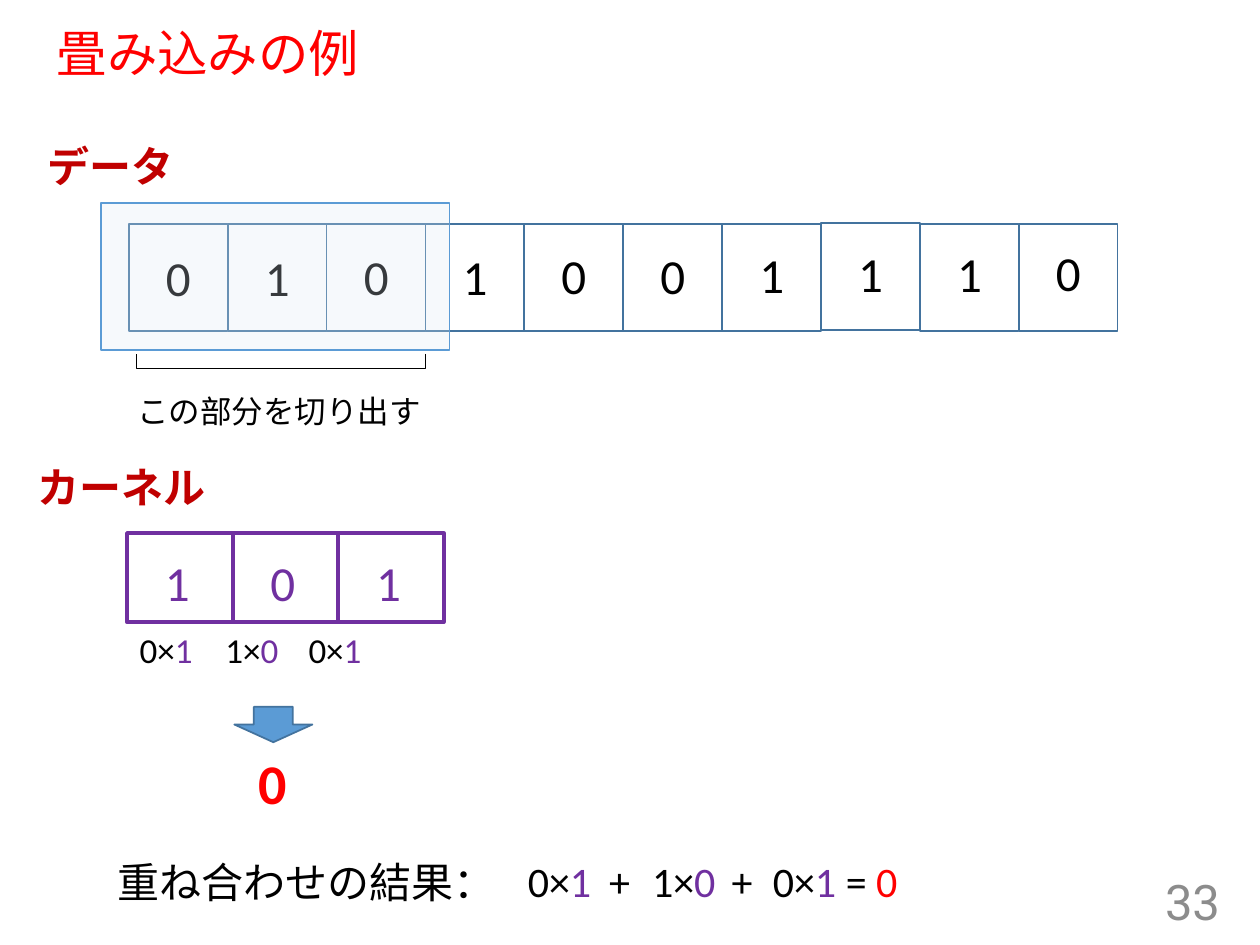
from pptx import Presentation
from pptx.dml.color import RGBColor
from pptx.enum.shapes import MSO_SHAPE
from pptx.enum.text import MSO_ANCHOR, PP_ALIGN
from pptx.oxml.ns import qn
from pptx.util import Pt
from lxml import etree

RECT = MSO_SHAPE.RECTANGLE
ARROW = MSO_SHAPE.DOWN_ARROW
BRACKET = MSO_SHAPE.RIGHT_BRACKET
MIDDLE = MSO_ANCHOR.MIDDLE
LEFT, RIGHT = PP_ALIGN.LEFT, PP_ALIGN.RIGHT


class Theme:
    black = RGBColor(0, 0, 0)
    red = RGBColor(255, 0, 0)
    crimson = RGBColor(192, 0, 0)
    purple = RGBColor(112, 48, 160)
    navy = RGBColor(67, 115, 158)
    blue = RGBColor(91, 155, 213)
    pale = RGBColor(222, 235, 247)
    gray = RGBColor(140, 140, 140)
    body, head, sans = "Calibri", "Noto Sans CJK JP", "Roboto"
    title, digit, total = 28.8, 28, 32
    large, term, note = 24, 20, 18


def write(left, top, width, height, runs, size, color=Theme.black,
          face=Theme.body, bold=False, stops=()):
    box = slide.shapes.add_textbox(Pt(left), Pt(top), Pt(width), Pt(height))
    box.text_frame.word_wrap = bool(stops)
    para = box.text_frame.paragraphs[0]
    if stops:
        tabs = etree.Element(qn("a:tabLst"))
        for stop in stops:
            etree.SubElement(tabs, qn("a:tab"), pos=str(Pt(stop)), algn="l")
        para._p.get_or_add_pPr().insert(0, tabs)
    font = para.font
    font.size, font.name, font.bold = Pt(size), face, bold
    for text, tint in ([(runs, color)] if isinstance(runs, str) else runs):
        run = para.add_run()
        run.text = text
        run.font.color.rgb = tint
    return box


def draw(kind, left, top, width, height, line, weight=1, fill=None):
    shape = slide.shapes.add_shape(kind, Pt(left), Pt(top), Pt(width), Pt(height))
    shape.shadow.inherit = False
    shape.line.color.rgb = line
    shape.line.width = Pt(weight)
    if fill is None:
        shape.fill.background()
    else:
        shape.fill.solid()
        shape.fill.fore_color.rgb = fill
    return shape


deck = Presentation()
deck.slide_width, deck.slide_height = Pt(720), Pt(540)
slide = deck.slides.add_slide(deck.slide_layouts[5])

title = slide.shapes.title
title.left, title.top, title.width, title.height = Pt(25.2), Pt(13.7), Pt(666), Pt(36.7)
title.text_frame.text = "畳み込みの例"
title.text_frame.vertical_anchor = MIDDLE
para = title.text_frame.paragraphs[0]
para.alignment, para.line_spacing = LEFT, 0.9
para.font.size, para.font.name = Pt(Theme.title), Theme.sans
para.font.color.rgb = Theme.red

page = write(542.2, 500.4, 162, 28.8, "33", Theme.digit, Theme.gray, Theme.sans)
page.text_frame.word_wrap = True
page.text_frame.vertical_anchor = MIDDLE
page.text_frame.paragraphs[0].alignment = RIGHT

data, pitch = "0101001110", 56.5
for i in range(len(data)):
    top = 127.4 if i == 7 else 128.1
    draw(RECT, 73.6 + i * pitch, top, pitch, 61.2, Theme.navy)
for i, digit in enumerate(data):
    write(87.8 + i * pitch, 138 - i * 0.3, 28.8, 41, digit, Theme.digit)

draw(ARROW, 133.9, 403.9, 44.6, 20.2, Theme.navy, fill=Theme.blue)
write(140.4, 424.1, 31, 46, "0", Theme.total, Theme.red, bold=True)

for i, digit in enumerate("101"):
    draw(RECT, 72.6 + i * 60.3, 304.6, 60.3, 51, Theme.purple, 2.25)
    write(87.2 + i * 60.3, 312.3, 28.8, 41, digit, Theme.digit, Theme.purple)

write(72.7, 355.7, 173, 31.7,
      [("0×", Theme.black), ("1", Theme.purple),
       ("\t1×", Theme.black), ("0", Theme.purple),
       ("\t0×", Theme.black), ("1", Theme.purple)],
      Theme.term, stops=(49, 96.5))

window = draw(RECT, 57.6, 115.9, 199.4, 84.2, Theme.blue, fill=Theme.pale)
tone = window.fill._xPr.find(qn("a:solidFill"))[0]
etree.SubElement(tone, qn("a:alpha"), val="25000")

brace = draw(BRACKET, 156.4, 123.8, 8, 165, Theme.black, 0.5)
brace.adjustments[0] = 0
brace.rotation = 90

write(71.3, 220.3, 177.8, 29, "この部分を切り出す", Theme.note)
write(59.8, 486, 238.3, 36, "重ね合わせの結果：", Theme.large)
write(294.5, 485.3, 270, 36,
      [("0×", Theme.black), ("1", Theme.purple),
       ("\t+\t1×", Theme.black), ("0", Theme.purple),
       ("\t+\t0×", Theme.black), ("1 ", Theme.purple),
       ("=", Theme.black), (" 0", Theme.red)],
      Theme.large, stops=(46.5, 71, 116.5, 140))

for left, top, width, text in ((20.2, 77, 87, "データ"), (14.4, 260, 111.6, "カーネル")):
    write(left, top, width, 36, text, Theme.large, Theme.crimson, Theme.head, True)

deck.save("out.pptx")
